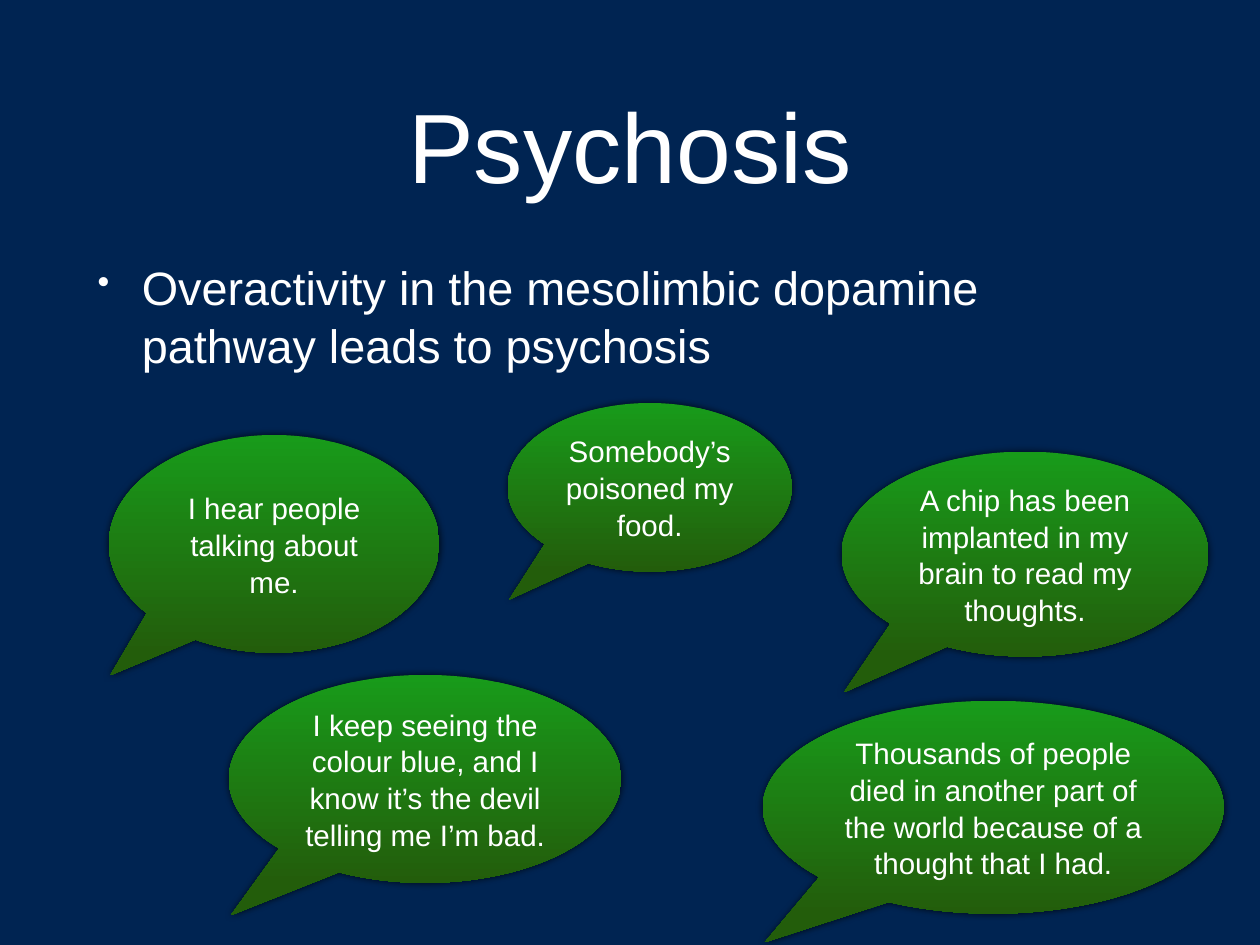
import dataclasses

import lxml.etree
import pptx
import pptx.dml.color
import pptx.enum.shapes
import pptx.enum.text
import pptx.oxml.ns
import pptx.util

Pt = pptx.util.Pt
RGB = pptx.dml.color.RGBColor.from_string
Align = pptx.enum.text.PP_ALIGN
Anchor = pptx.enum.text.MSO_ANCHOR
qn = pptx.oxml.ns.qn


@dataclasses.dataclass(frozen=True)
class Theme:
    background: str = "002452"
    text: str = "FFFFFF"
    bubble_top: str = "189B1A"
    bubble_bottom: str = "235D0B"
    shadow: str = "000000"
    font: str = "Arial"
    title_size: int = 80
    body_size: int = 38
    bubble_size: int = 24
    line_spacing: float = 1.04
    inset: float = 4.3


theme = Theme()


def write(shape, text, size, align, anchor):
    """Fill a shape with one paragraph in the theme font and return the paragraph."""
    frame = shape.text_frame
    frame.word_wrap = True
    frame.vertical_anchor = anchor
    frame.margin_left = frame.margin_right = Pt(theme.inset)
    frame.margin_top = frame.margin_bottom = Pt(theme.inset)
    paragraph = frame.paragraphs[0]
    paragraph.text = text
    paragraph.alignment = align
    paragraph.line_spacing = theme.line_spacing
    paragraph.font.name = theme.font
    paragraph.font.size = Pt(size)
    paragraph.font.color.rgb = RGB(theme.text)
    return paragraph


def add_soft_shadow(shape):
    shape.shadow.inherit = False
    effects = shape._element.spPr.find(qn("a:effectLst"))
    shadow = lxml.etree.SubElement(
        effects, qn("a:outerShdw"), blurRad=str(Pt(6)), dist="0",
        dir="18900000", rotWithShape="0")
    color = lxml.etree.SubElement(shadow, qn("a:srgbClr"), val=theme.shadow)
    lxml.etree.SubElement(color, qn("a:alpha"), val="80000")


deck = pptx.Presentation()
deck.slide_width, deck.slide_height = Pt(1024), Pt(768)
slide = deck.slides.add_slide(deck.slide_layouts[6])
slide.background.fill.solid()
slide.background.fill.fore_color.rgb = RGB(theme.background)

# Heading and statement
title = slide.shapes.add_textbox(Pt(75), Pt(32), Pt(874), Pt(167))
write(title, "Psychosis", theme.title_size, Align.CENTER, Anchor.MIDDLE)

statement = slide.shapes.add_textbox(Pt(75), Pt(204), Pt(874), Pt(495))
point = write(
    statement,
    "Overactivity in the mesolimbic dopamine pathway leads to psychosis",
    theme.body_size, Align.LEFT, Anchor.TOP)
bullet = point._p.get_or_add_pPr()
bullet.set("marL", str(Pt(36)))
bullet.set("indent", str(Pt(-36)))
bullet_size = lxml.etree.Element(qn("a:buSzPct"), val="75000")
bullet_char = lxml.etree.Element(qn("a:buChar"), char="•")
bullet.find(qn("a:lnSpc")).addnext(bullet_size)
bullet_size.addnext(bullet_char)

# Speech bubbles: left, top, width, height, tail offset (x, y), thought
thoughts = [
    (88.5, 353.5, 268.5, 177, -0.496, 0.604,
     "I hear people talking about me."),
    (412.5, 327.5, 231, 137, -0.494, 0.666,
     "Somebody’s poisoned my food."),
    (684, 367, 298, 166.5, -0.494, 0.676,
     "A chip has been implanted in my brain to read my thoughts."),
    (186, 548.5, 319, 169, -0.495, 0.656,
     "I keep seeing the colour blue, and I know it’s the devil telling me I’m bad."),
    (620, 569.5, 374.5, 173, -0.496, 0.635,
     "Thousands of people died in another part of the world because of a "
     "thought that I had."),
]
for left, top, width, height, tail_x, tail_y, thought in thoughts:
    bubble = slide.shapes.add_shape(
        pptx.enum.shapes.MSO_SHAPE.OVAL_CALLOUT,
        Pt(left), Pt(top), Pt(width), Pt(height))
    bubble.adjustments[0] = tail_x
    bubble.adjustments[1] = tail_y
    bubble.fill.gradient()
    bubble.fill.gradient_angle = 270
    shades = (theme.bubble_top, theme.bubble_bottom)
    for stop, shade in zip(bubble.fill.gradient_stops, shades):
        stop.color.rgb = RGB(shade)
    bubble.line.fill.background()
    add_soft_shadow(bubble)
    write(bubble, thought, theme.bubble_size, Align.CENTER, Anchor.MIDDLE)

deck.save("out.pptx")
